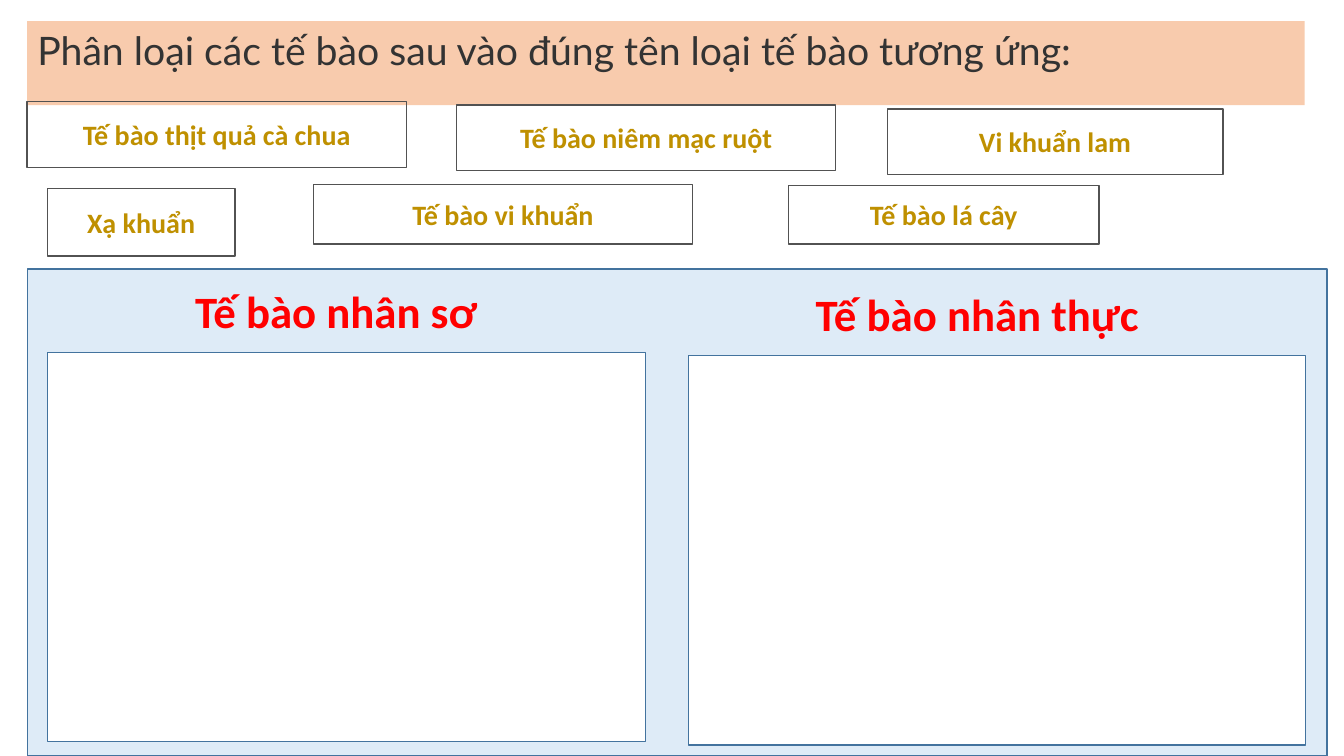
from pptx import Presentation
from pptx.dml.color import RGBColor
from pptx.enum.shapes import MSO_SHAPE as Shape
from pptx.enum.text import MSO_ANCHOR as Anchor, MSO_AUTO_SIZE as AutoSize, PP_ALIGN as Align
from pptx.util import Inches, Pt

CELL_LABELS = [
    ("Tế bào thịt quả cà chua", 0.27, 1.01, 3.76, 0.65),
    ("Tế bào niêm mạc ruột", 4.53, 1.04, 3.76, 0.65),
    ("Vi khuẩn lam", 8.8, 1.08, 3.33, 0.65),
    ("Xạ khuẩn", 0.47, 1.87, 1.86, 0.67),
    ("Tế bào vi khuẩn", 3.11, 1.83, 3.76, 0.59),
    ("Tế bào lá cây", 7.82, 1.84, 3.08, 0.58),
]
CELL_TYPES = [
    ("Tế bào nhân sơ", 0.47, 2.67, 5.93),
    ("Tế bào nhân thực", 6.83, 2.7, 6.12),
]


def color(value):
    return RGBColor.from_string(value)


def write(box, text, size, ink, font="Calibri", bold=True, align=Align.CENTER, anchor=Anchor.MIDDLE):
    frame = box.text_frame
    frame.word_wrap = True
    frame.vertical_anchor = anchor
    para = frame.paragraphs[0]
    para.alignment = align
    span = para.add_run()
    span.text = text
    span.font.name = font
    span.font.size = Pt(size)
    span.font.bold = bold
    span.font.color.rgb = color(ink)


def add_rectangle(shapes, left, top, width, height, line, fill=None):
    box = shapes.add_shape(Shape.RECTANGLE, Inches(left), Inches(top), Inches(width), Inches(height))
    box.shadow.inherit = False
    if fill:
        box.fill.solid()
        box.fill.fore_color.rgb = color(fill)
    else:
        box.fill.background()
    box.line.color.rgb = color(line)
    box.line.width = Pt(1)
    return box


def set_title(slide, text):
    title = slide.shapes.title
    title.left, title.top = Inches(0.27), Inches(0.21)
    title.width, title.height = Inches(12.67), Inches(0.57)
    title.fill.solid()
    title.fill.fore_color.rgb = color("F8CBAD")
    write(title, text, 28, "333333", font="Lato", bold=False, align=Align.LEFT, anchor=Anchor.TOP)
    title.text_frame.auto_size = AutoSize.SHAPE_TO_FIT_TEXT


def add_sorting_panel(slide):
    shapes = slide.shapes.add_group_shape().shapes
    add_rectangle(shapes, 0.27, 2.67, 12.89, 4.83, "43739E", "DEEBF7")
    for name, left, top, width in CELL_TYPES:
        add_rectangle(shapes, left, top + 0.83, width, 3.86, "43739E", "FFFFFF")
        heading = shapes.add_textbox(Inches(left), Inches(top), Inches(5.73), Inches(0.83))
        write(heading, name, 32, "FF0000")


def main():
    deck = Presentation()
    deck.slide_width, deck.slide_height = Inches(13.33), Inches(7.5)
    slide = deck.slides.add_slide(deck.slide_layouts.get_by_name("Title Only"))
    set_title(slide, "Phân loại các tế bào sau vào đúng tên loại tế bào tương ứng:")
    add_sorting_panel(slide)
    for name, left, top, width, height in CELL_LABELS:
        label = add_rectangle(slide.shapes, left, top, width, height, "525252")
        write(label, name, 20, "BF9000")
    deck.save("out.pptx")


if __name__ == "__main__":
    main()
